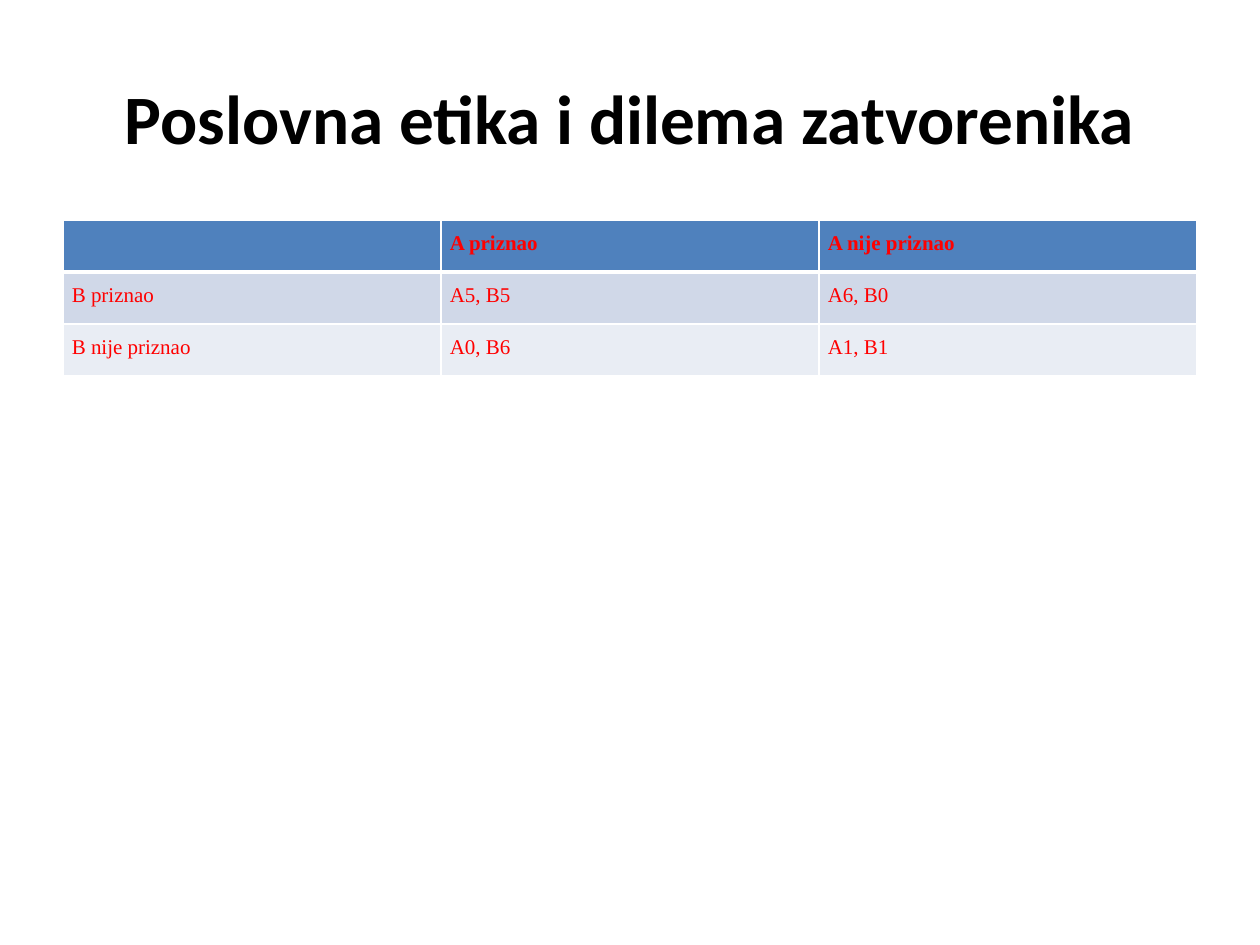
import dataclasses

import lxml.etree
import pptx
import pptx.dml.color
import pptx.enum.text
import pptx.oxml.ns
import pptx.util

WIDTH, HEIGHT = 10, 7.5
MARGIN = WIDTH / 20
CONTENT_WIDTH = WIDTH - 2 * MARGIN
ROW_HEIGHT = 0.41
COLORS = {
    "title": "000000",
    "text": "FF0000",
    "header": "4F81BD",
    "odd": "D0D8E8",
    "even": "E9EDF4",
    "border": "FFFFFF",
}


@dataclasses.dataclass
class Row:
    texts: tuple[str, ...]
    fill: str
    bold: bool = False
    top: int = 1
    bottom: int = 1


ROWS = [
    Row(("", "A priznao", "A nije priznao"), "header", bold=True, bottom=3),
    Row(("B priznao ", "A5, B5", "A6, B0"), "odd", top=3),
    Row(("B nije priznao", "A0, B6", "A1, B1"), "even"),
]


def rgb(name: str) -> pptx.dml.color.RGBColor:
    return pptx.dml.color.RGBColor.from_string(COLORS[name])


def style_font(font, face: str, size: float, color: str, bold: bool) -> None:
    font.name, font.size, font.bold = face, pptx.util.Pt(size), bold
    font.color.rgb = rgb(color)


def add_borders(cell, row: Row) -> None:
    properties = cell._tc.get_or_add_tcPr()
    qn = pptx.oxml.ns.qn
    for side, points in (("L", 1), ("R", 1), ("T", row.top), ("B", row.bottom)):
        line = lxml.etree.SubElement(properties, qn(f"a:ln{side}"), w=str(pptx.util.Pt(points)))
        fill = lxml.etree.SubElement(line, qn("a:solidFill"))
        lxml.etree.SubElement(fill, qn("a:srgbClr"), val=COLORS["border"])


def fill_cell(cell, text: str, row: Row) -> None:
    add_borders(cell, row)
    cell.fill.solid()
    cell.fill.fore_color.rgb = rgb(row.fill)
    cell.margin_left = cell.margin_right = pptx.util.Inches(0.07)
    cell.margin_top = cell.margin_bottom = 0
    if not text:
        return
    cell.text_frame.text = text
    para = cell.text_frame.paragraphs[0]
    para.alignment = pptx.enum.text.PP_ALIGN.JUSTIFY
    para.line_spacing = 1.5
    style_font(para.runs[0].font, "Times New Roman", 12, "text", row.bold)


def add_title(page, text: str) -> None:
    title = page.shapes.title
    title.left, title.top = pptx.util.Inches(MARGIN), pptx.util.Inches(HEIGHT / 25)
    title.width, title.height = pptx.util.Inches(CONTENT_WIDTH), pptx.util.Inches(HEIGHT / 6)
    frame = title.text_frame
    frame.text = text
    frame.vertical_anchor = pptx.enum.text.MSO_ANCHOR.MIDDLE
    para = frame.paragraphs[0]
    para.alignment = pptx.enum.text.PP_ALIGN.CENTER
    style_font(para.runs[0].font, "Calibri", 39.6, "title", True)


def add_payoff_table(page, rows: list[Row]) -> None:
    box = page.shapes.add_table(
        len(rows), len(rows[0].texts),
        pptx.util.Inches(MARGIN), pptx.util.Inches(1.75),
        pptx.util.Inches(CONTENT_WIDTH), pptx.util.Inches(ROW_HEIGHT * len(rows)),
    )
    for row_index, row in enumerate(rows):
        for column_index, text in enumerate(row.texts):
            fill_cell(box.table.cell(row_index, column_index), text, row)


def main() -> None:
    deck = pptx.Presentation()
    deck.slide_width, deck.slide_height = pptx.util.Inches(WIDTH), pptx.util.Inches(HEIGHT)
    page = deck.slides.add_slide(deck.slide_layouts.get_by_name("Title Only"))

    # Heading
    add_title(page, "Poslovna etika i dilema zatvorenika")

    # Prisoner's dilemma outcomes
    add_payoff_table(page, ROWS)

    deck.save("out.pptx")


if __name__ == "__main__":
    main()
